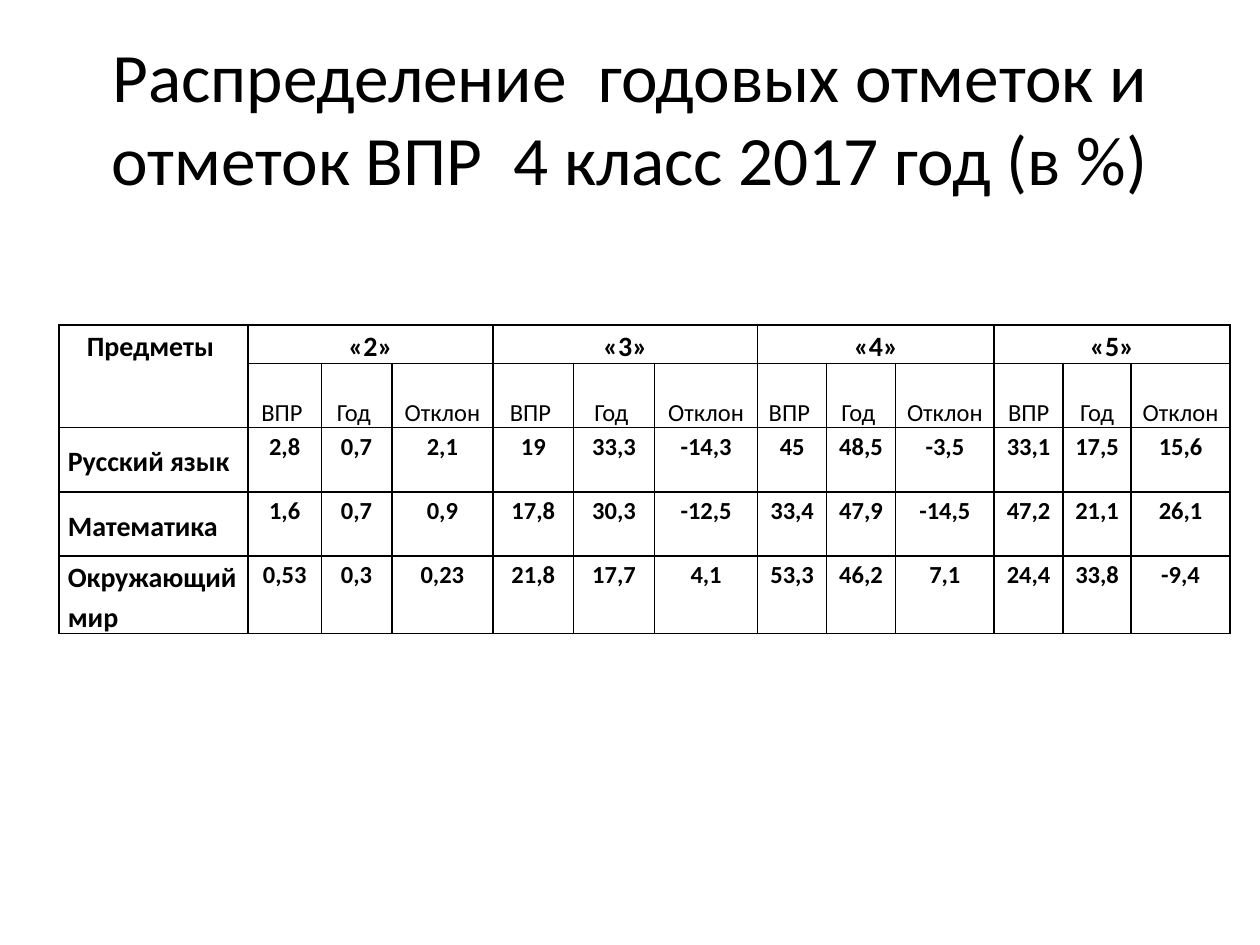
from lxml import etree
from pptx import Presentation
from pptx.dml.color import RGBColor
from pptx.enum import text
from pptx.oxml import ns
from pptx.util import Pt

TITLE = "Распределение  годовых отметок и отметок ВПР  4 класс 2017 год (в %)"
SUBJECT_HEADING = "Предметы "
MARKS = ["«2»", "«3»", "«4»", "«5»"]
MEASURES = ["ВПР ", "Год ", "Отклон"] * 3 + ["ВПР", "Год", "Отклон"]
RESULTS = [
    ("Русский язык", "2,8 0,7 2,1 19 33,3 -14,3 45 48,5 -3,5 33,1 17,5 15,6"),
    ("Математика", "1,6 0,7 0,9 17,8 30,3 -12,5 33,4 47,9 -14,5 47,2 21,1 26,1"),
    ("Окружающий мир", "0,53 0,3 0,23 21,8 17,7 4,1 53,3 46,2 7,1 24,4 33,8 -9,4"),
]
COLUMN_WIDTHS = [108, 41.8, 40.4, 57.7, 46.2, 46.2, 59, 39.4, 39.4, 56.4, 39.4, 38.9, 56.5]
ROW_HEIGHTS = [18.7, 36.7, 36.7, 36.7, 40.3]
TABLE_LEFT, TABLE_TOP = 33.8, 185.6
COLORS = {"ink": "000000", "paper": "FFFFFF"}
FONT = "Calibri"
TOP, MIDDLE, BOTTOM = (
    text.MSO_ANCHOR.TOP, text.MSO_ANCHOR.MIDDLE, text.MSO_ANCHOR.BOTTOM)
LEFT, CENTER = text.PP_ALIGN.LEFT, text.PP_ALIGN.CENTER


def write(frame, content, size, bold=False, align=CENTER):
    frame.text = content
    para = frame.paragraphs[0]
    para.alignment = align
    font = para.runs[0].font
    font.name, font.size, font.bold = FONT, Pt(size), bold
    font.color.rgb = RGBColor.from_string(COLORS["ink"])
    return para


def add_borders(cell):
    properties = cell._tc.get_or_add_tcPr()
    for side in ("lnL", "lnR", "lnT", "lnB"):
        line = etree.SubElement(properties, ns.qn(f"a:{side}"), w=str(Pt(1)))
        fill = etree.SubElement(line, ns.qn("a:solidFill"))
        etree.SubElement(fill, ns.qn("a:srgbClr"), val=COLORS["ink"])


def fill_cell(cell, content, size, bold=True, align=CENTER, anchor=TOP):
    write(cell.text_frame, content, size, bold, align).line_spacing = 1.15
    cell.vertical_anchor = anchor


def add_title(page):
    box = page.shapes.add_textbox(Pt(36), Pt(21.6), Pt(648), Pt(90))
    box.text_frame.word_wrap = True
    box.text_frame.vertical_anchor = MIDDLE
    write(box.text_frame, TITLE, 39.6)


def add_marks_table(page):
    table = page.shapes.add_table(
        len(ROW_HEIGHTS), len(COLUMN_WIDTHS), Pt(TABLE_LEFT), Pt(TABLE_TOP),
        Pt(sum(COLUMN_WIDTHS)), Pt(sum(ROW_HEIGHTS))).table
    for column, width in zip(table.columns, COLUMN_WIDTHS):
        column.width = Pt(width)
    for row, height in zip(table.rows, ROW_HEIGHTS):
        row.height = Pt(height)
    for cell in table.iter_cells():
        cell.margin_left = cell.margin_right = Pt(5)
        cell.margin_top = cell.margin_bottom = 0
        add_borders(cell)
        cell.fill.solid()
        cell.fill.fore_color.rgb = RGBColor.from_string(COLORS["paper"])

    table.cell(0, 0).merge(table.cell(1, 0))
    fill_cell(table.cell(0, 0), SUBJECT_HEADING, 16)
    for index, mark in enumerate(MARKS):
        first = 1 + 3 * index
        table.cell(0, first).merge(table.cell(0, first + 2))
        fill_cell(table.cell(0, first), mark, 16, anchor=BOTTOM)
    for column, measure in enumerate(MEASURES, 1):
        fill_cell(table.cell(1, column), measure, 14, bold=False, anchor=BOTTOM)
    for row, (subject, values) in enumerate(RESULTS, 2):
        fill_cell(table.cell(row, 0), subject, 16, align=LEFT, anchor=MIDDLE)
        for column, value in enumerate(values.split(), 1):
            fill_cell(table.cell(row, column), value, 14)


def main():
    deck = Presentation()
    deck.slide_width, deck.slide_height = Pt(720), Pt(540)
    page = deck.slides.add_slide(deck.slide_layouts[6])
    add_title(page)
    add_marks_table(page)
    deck.save("out.pptx")


if __name__ == "__main__":
    main()
